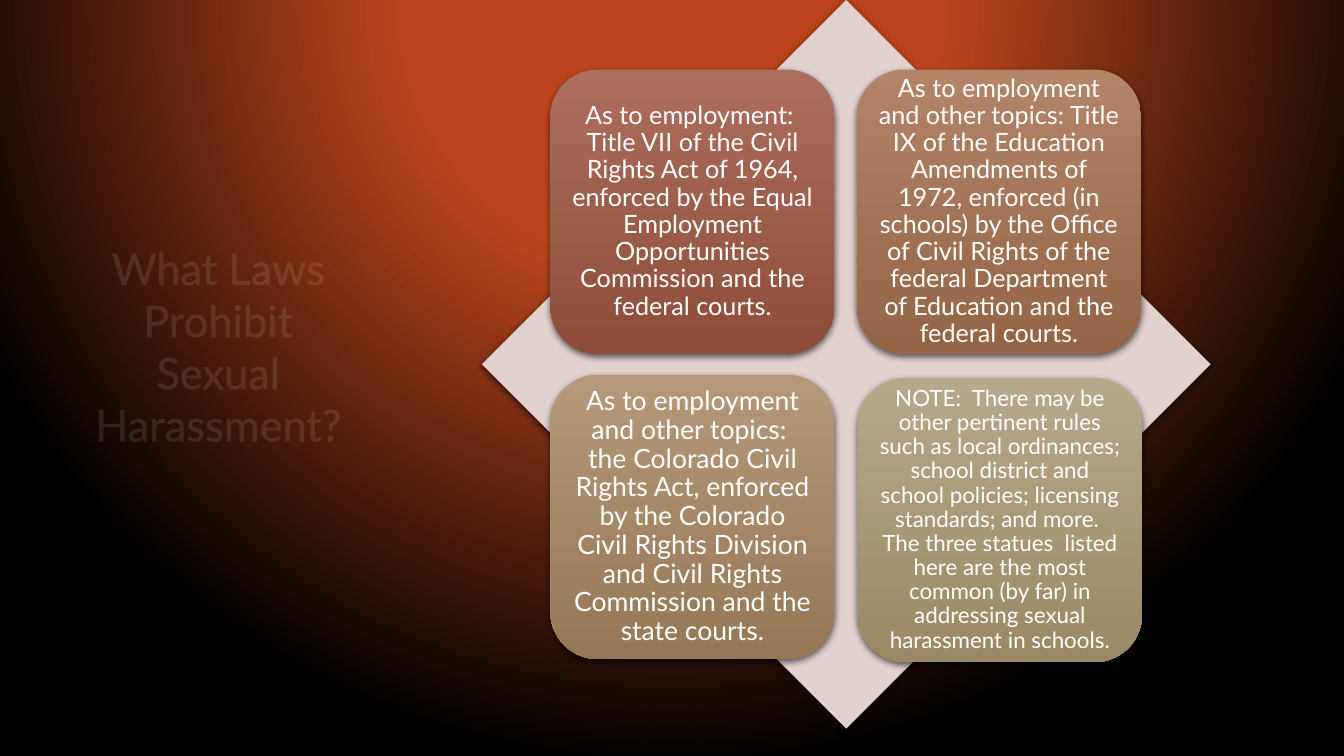
from dataclasses import dataclass

from lxml.etree import SubElement
from pptx import Presentation
from pptx.dml.color import RGBColor
from pptx.enum.shapes import MSO_SHAPE
from pptx.enum.text import MSO_ANCHOR, PP_ALIGN
from pptx.oxml.ns import qn
from pptx.util import Inches, Pt


@dataclass(frozen=True)
class Theme:
    """Colours, font and type sizes of the slide."""
    font: str = "Lato"
    text: str = "FFFFFF"
    shadow: str = "000000"
    diamond: str = "E1D2CF"
    background: tuple = ((0.35, "BC451B"), (1, "000000"))
    rust: tuple = ((0, "AD6E5E"), (1, "8E4D3A"))
    copper: tuple = ((0, "B48469"), (1, "946446"))
    sand: tuple = ((0, "B5987A"), (1, "967856"))
    olive: tuple = ((0, "B6A88B"), (1, "9A8964"))
    title_size: int = 31
    large_size: int = 19
    body_size: int = 18
    note_size: int = 16


COLUMNS = 40
CARD_SIDE = 8.46
CARD_MARGIN = 0.41
THEME = Theme()

CARDS = [
    (16.38, 2.07, THEME.rust, THEME.body_size, 0.07,
     "As to employment:  Title VII of the Civil Rights Act of 1964, enforced by the Equal "
     "Employment Opportunities Commission and the federal courts."),
    (25.5, 2.07, THEME.copper, THEME.body_size, 0.07,
     "As to employment and other topics: Title IX of the Education Amendments of 1972, "
     "enforced (in schools) by the Office of Civil Rights of the federal Department of "
     "Education and the federal courts."),
    (16.38, 11.16, THEME.sand, THEME.large_size, 0.08,
     "As to employment and other topics:  the Colorado Civil Rights Act, enforced by the "
     "Colorado Civil Rights Division and Civil Rights Commission and the state courts."),
    (25.53, 11.25, THEME.olive, THEME.note_size, 0.07,
     "NOTE:  There may be other pertinent rules such as local ordinances; school district "
     "and school policies; licensing standards; and more.  The three statues  listed here "
     "are the most common (by far) in addressing sexual harassment in schools."),
]


def set_all(target, values):
    """Set every attribute named in a dict of format values."""
    for name, value in values.items():
        setattr(target, name, value)


def add_color(parent, color, alpha):
    """Append a colour with an opacity in percent."""
    element = SubElement(parent, qn("a:srgbClr"), val=color)
    SubElement(element, qn("a:alpha"), val=str(alpha * 1000))


class SlideBuilder:
    """Draws styled elements on the current slide, measured in square grid cells."""

    def __init__(self, presentation, theme):
        """Add a blank slide and derive the grid cell from its width."""
        self.theme = theme
        self.cell = presentation.slide_width / COLUMNS
        self.slide = presentation.slides.add_slide(presentation.slide_layouts[6])
        self.group = self.slide.shapes.add_group_shape()

    def lengths(self, *cells):
        """Turn grid cells into slide lengths."""
        return [round(cell * self.cell) for cell in cells]

    def gradient(self, fill, stops):
        """Apply a two-stop gradient running from top to bottom."""
        fill.gradient()
        fill.gradient_angle = 270
        for stop, (position, color) in zip(fill.gradient_stops, stops):
            stop.position = position
            stop.color.rgb = RGBColor.from_string(color)

    def background(self):
        """Fill the slide with a glow centred above its upper edge."""
        self.gradient(self.slide.background.fill, self.theme.background)
        gradient = self.slide.element.find(".//" + qn("a:gradFill"))
        gradient.remove(gradient.find(qn("a:lin")))
        glow = SubElement(gradient, qn("a:path"), path="circle")
        SubElement(glow, qn("a:fillToRect"), l="50000", t="-80000", r="50000", b="180000")

    def square(self, kind, left, top, side, fill):
        """Add a borderless square preset with a soft shadow."""
        shape = self.group.shapes.add_shape(kind, *self.lengths(left, top, side, side))
        if isinstance(fill, str):
            shape.fill.solid()
            shape.fill.fore_color.rgb = RGBColor.from_string(fill)
        else:
            self.gradient(shape.fill, fill)
        shape.line.fill.background()
        shape.shadow.inherit = False
        effects = shape.element.spPr.find(qn("a:effectLst"))
        shadow = SubElement(effects, qn("a:outerShdw"), blurRad=str(Pt(5)), dist=str(Pt(2)),
                            dir="5400000", algn="ctr", rotWithShape="0")
        add_color(shadow, self.theme.shadow, 60)

    def text(self, shapes, box, wording, size, frame_format, paragraph_format):
        """Add centred text in a wrapping box and return its run."""
        frame = shapes.add_textbox(*self.lengths(*box)).text_frame
        set_all(frame, {"word_wrap": True, "vertical_anchor": MSO_ANCHOR.MIDDLE, **frame_format})
        paragraph = frame.paragraphs[0]
        set_all(paragraph, {"alignment": PP_ALIGN.CENTER, **paragraph_format})
        run = paragraph.add_run()
        run.text = wording
        set_all(run.font, {"name": self.theme.font, "size": Pt(size)})
        run.font.color.rgb = RGBColor.from_string(self.theme.text)
        return run

    def title(self, box, wording):
        """Add the title with a faint outline around its letters."""
        run = self.text(self.slide.shapes, box, wording, self.theme.title_size, {}, {})
        properties = run.font.fill and run.text and run._r.get_or_add_rPr()
        outline = SubElement(properties, qn("a:ln"), w=str(Pt(0.75)))
        properties.insert(0, outline)
        add_color(SubElement(outline, qn("a:solidFill")), self.theme.text, 10)
        SubElement(outline, qn("a:prstDash"), val="solid")

    def card(self, left, top, fill, size, inset, wording):
        """Add a rounded card with its text box inside."""
        self.square(MSO_SHAPE.ROUNDED_RECTANGLE, left, top, CARD_SIDE, fill)
        side = CARD_SIDE - 2 * CARD_MARGIN
        box = (left + CARD_MARGIN, top + CARD_MARGIN, side, side)
        edges = ("left", "top", "right", "bottom")
        insets = {f"margin_{edge}": Inches(inset) for edge in edges}
        spacing = {"line_spacing": 0.9, "space_after": Pt(0.35 * size)}
        self.text(self.group.shapes, box, wording, size, insets, spacing)


def main():
    """Build and save the slide."""
    presentation = Presentation()
    set_all(presentation, {"slide_width": Inches(13.33), "slide_height": Inches(7.5)})
    builder = SlideBuilder(presentation, THEME)
    builder.background()
    builder.title((2.25, 2.1, 8.49, 16.38), "What Laws Prohibit Sexual Harassment?")
    builder.square(MSO_SHAPE.DIAMOND, 14.34, 0, 21.69, THEME.diamond)
    for card in CARDS:
        builder.card(*card)
    presentation.save("out.pptx")


if __name__ == "__main__":
    main()
